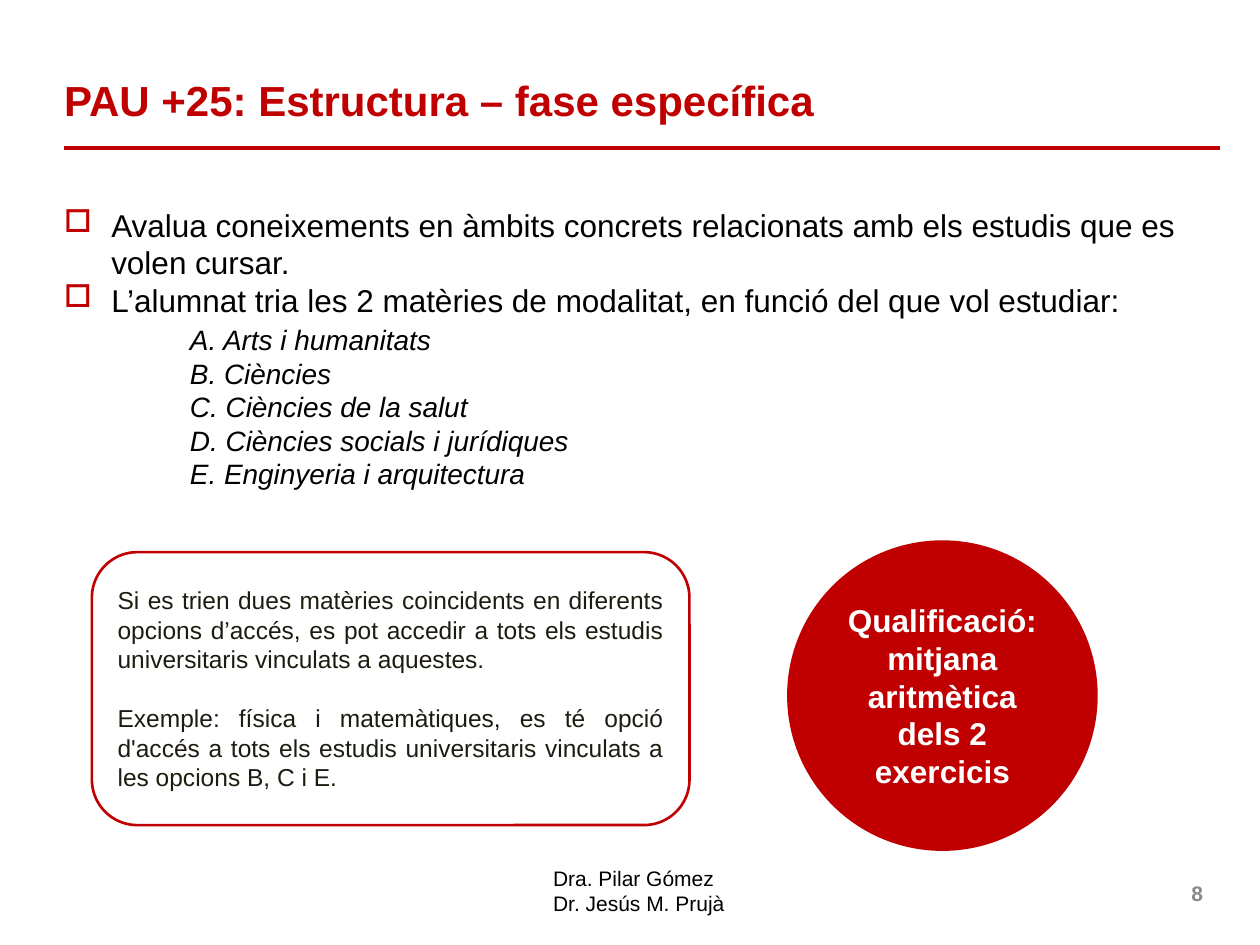
import pptx
import pptx.util
import pptx.dml.color
import pptx.enum.shapes
import pptx.enum.text
from lxml import etree

Pt = pptx.util.Pt
RGBColor = pptx.dml.color.RGBColor
SHAPE = pptx.enum.shapes.MSO_SHAPE
ALIGN = pptx.enum.text.PP_ALIGN
ANCHOR = pptx.enum.text.MSO_ANCHOR

RED = RGBColor(0xC0, 0x00, 0x00)
BLACK = RGBColor(0x00, 0x00, 0x00)
WHITE = RGBColor(0xFF, 0xFF, 0xFF)
GREY = RGBColor(0x89, 0x89, 0x89)
DARK = RGBColor(0x1E, 0x1C, 0x11)
NS = "http://schemas.openxmlformats.org/drawingml/2006/main"

TITLE = "PAU +25: Estructura – fase específica"
POINTS = [
    "Avalua coneixements en àmbits concrets relacionats amb els estudis que es volen cursar.",
    "L’alumnat tria les 2 matèries de modalitat, en funció del que vol estudiar:",
]
OPTIONS = [
    "A. Arts i humanitats",
    "B. Ciències",
    "C. Ciències de la salut",
    "D. Ciències socials i jurídiques",
    "E. Enginyeria i arquitectura",
]
NOTE = [
    "Si es trien dues matèries coincidents en diferents opcions d’accés, es pot accedir a tots els estudis universitaris vinculats a aquestes.",
    "Exemple: física i matemàtiques, es té opció d'accés a tots els estudis universitaris vinculats a les opcions B, C i E.",
]
GRADE = ["Qualificació:", "mitjana aritmètica dels 2 exercicis"]
AUTHORS = ["Dra. Pilar Gómez", "Dr. Jesús M. Prujà"]
PAGE = ["8"]


def write(sp, lines, size, color, bold=False, align=ALIGN.LEFT, anchor=ANCHOR.MIDDLE):
    tf = sp.text_frame
    tf.word_wrap = True
    tf.vertical_anchor = anchor
    tf.text = "\n".join(lines)
    for p in tf.paragraphs:
        p.alignment = align
        p.font.name = "Arial"
        p.font.size = Pt(size)
        p.font.bold = bold
        p.font.color.rgb = color
    return tf.paragraphs


def add_text(s, box, *args, **kwargs):
    return write(s.shapes.add_textbox(*map(Pt, box)), *args, **kwargs)


def add_panel(s, kind, box, fill):
    sp = s.shapes.add_shape(kind, *map(Pt, box))
    sp.shadow.inherit = False
    sp.fill.solid()
    sp.fill.fore_color.rgb = fill
    sp.line.color.rgb = RED
    sp.line.width = Pt(1.5)
    return sp


def indent(p, left, bullet=None):
    pPr = p._p.get_or_add_pPr()
    pPr.set("marL", str(Pt(left)))
    if bullet:
        pPr.set("indent", str(-Pt(left)))
        clr = etree.Element(f"{{{NS}}}buClr")
        etree.SubElement(clr, f"{{{NS}}}srgbClr", val=str(RED))
        pPr.insert(0, clr)
        pPr.insert(1, etree.Element(f"{{{NS}}}buChar", char=bullet))


prs = pptx.Presentation()
prs.slide_width, prs.slide_height = Pt(720), Pt(540)
s = prs.slides.add_slide(prs.slide_layouts[5])

title = s.shapes.title
title.left, title.top, title.width, title.height = map(Pt, (29.5, 37.5, 674.5, 39.5))
write(title, [TITLE], 24, RED, bold=True)

rule = s.shapes.add_connector(
    pptx.enum.shapes.MSO_CONNECTOR.STRAIGHT, Pt(36.5), Pt(84.5), Pt(697), Pt(84.5))
rule.line.color.rgb = RED
rule.line.width = Pt(2.25)
etree.SubElement(rule._element.spPr, f"{{{NS}}}effectLst")

body = add_text(s, (29.5, 114, 653, 193.5), POINTS + OPTIONS, 18, BLACK, anchor=ANCHOR.TOP)
points, options = body[:len(POINTS)], body[len(POINTS):]
for p in points:
    indent(p, 27, "□")
for p in options:
    indent(p, 72)
    p.font.size = Pt(16)
    p.font.italic = True
options[0].space_before = Pt(2)

circle = add_panel(s, SHAPE.OVAL, (450.5, 309.5, 176, 176), RED)
write(circle, GRADE, 18, WHITE, bold=True, align=ALIGN.CENTER)

card = add_panel(s, SHAPE.ROUNDED_RECTANGLE, (52.5, 315.5, 341.5, 156), WHITE)
note = write(card, NOTE, 14, DARK, align=ALIGN.JUSTIFY)
note[1].space_before = Pt(17)

add_text(s, (309, 491, 113, 36.5), AUTHORS, 12, BLACK, anchor=ANCHOR.TOP)
add_text(s, (526.5, 496, 168, 29), PAGE, 12, GREY, bold=True, align=ALIGN.RIGHT)

prs.save("out.pptx")
